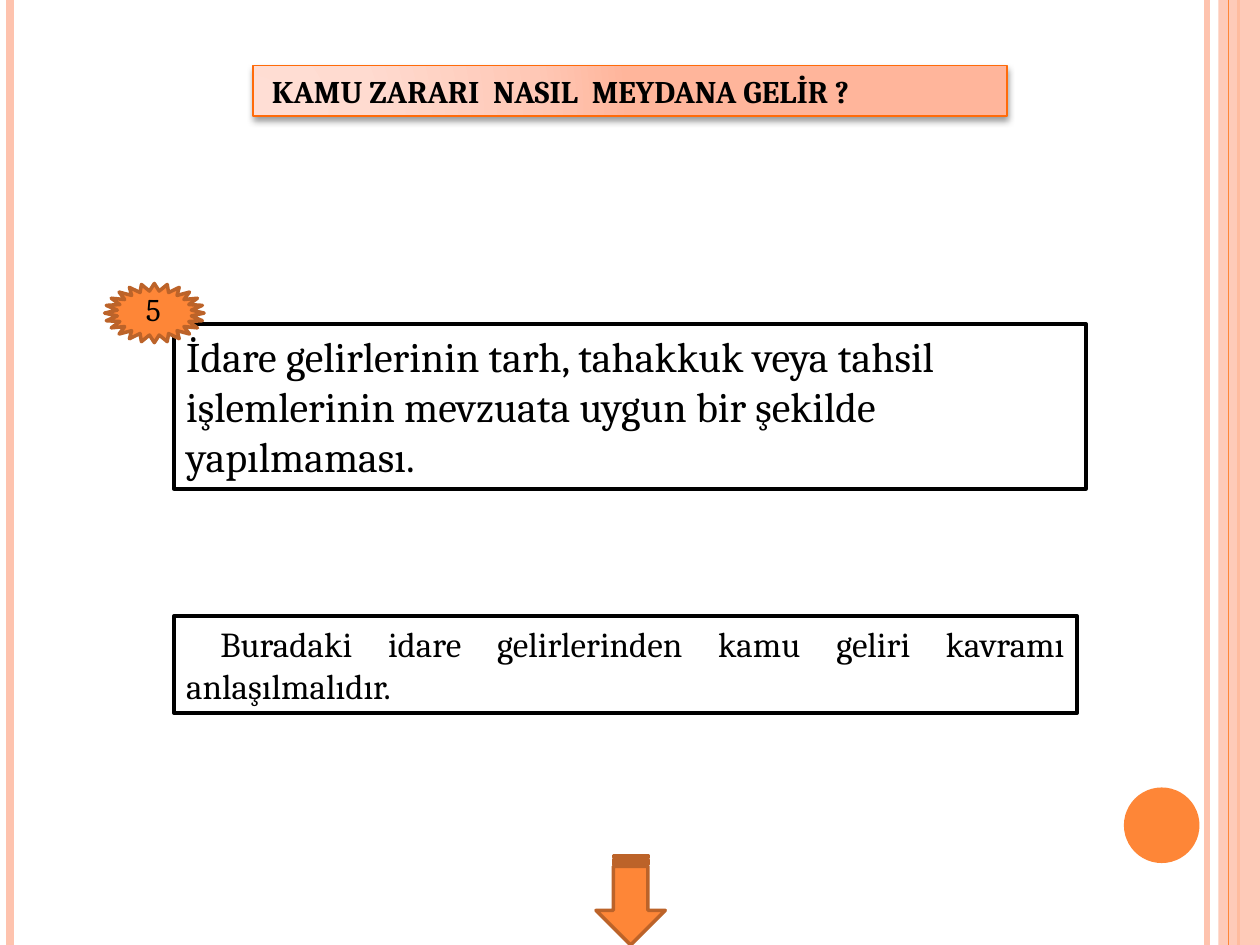
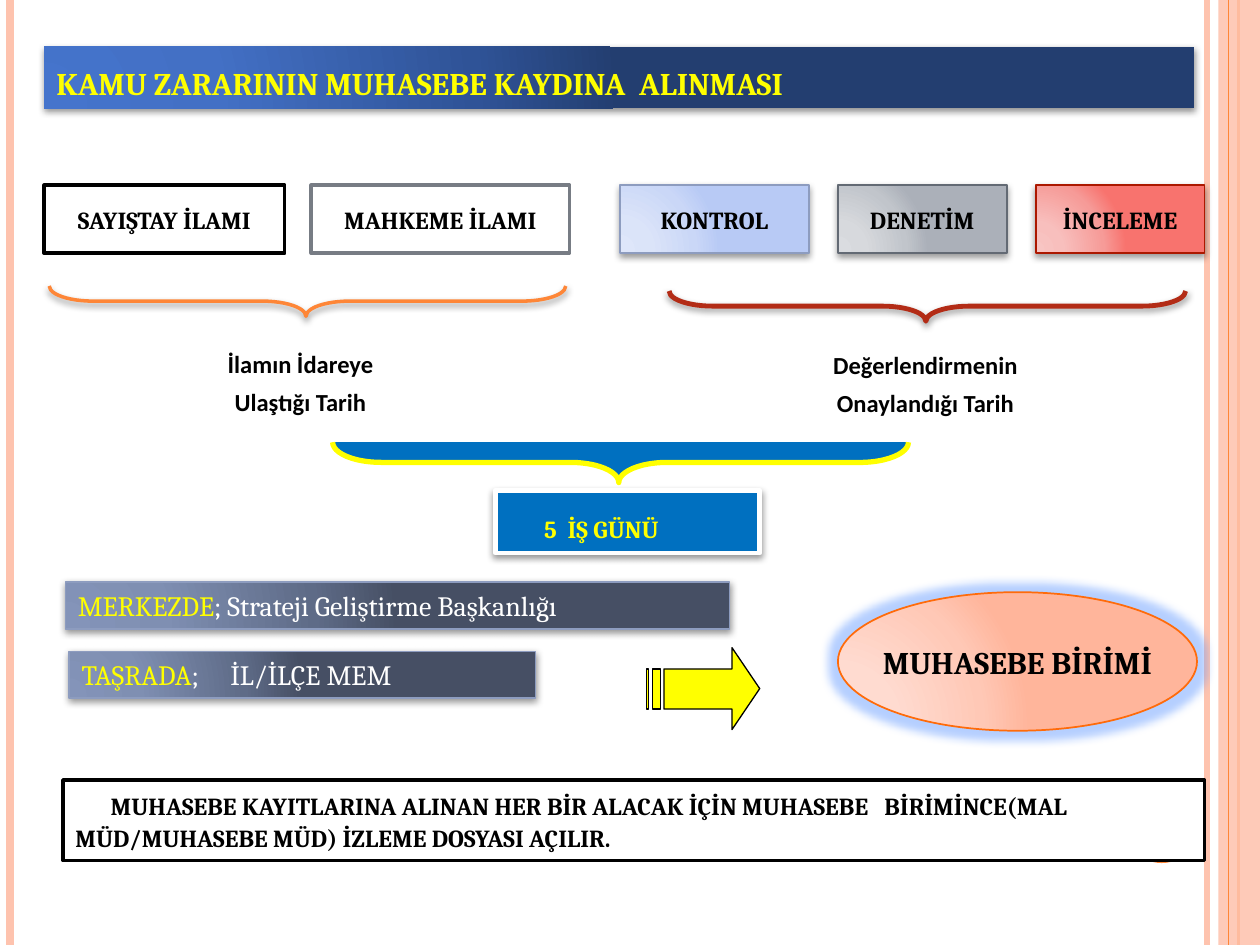
from lxml.etree import SubElement as Sub
from pptx import Presentation
from pptx.dml.color import RGBColor as RGB
from pptx.enum.shapes import MSO_CONNECTOR as Conn, MSO_SHAPE as Kind
from pptx.enum.text import MSO_ANCHOR as Anchor, PP_ALIGN as Align
from pptx.oxml.ns import qn
from pptx.util import Inches, Pt

BLACK = RGB(0, 0, 0)
WHITE = RGB(0xFF, 0xFF, 0xFF)
YELLOW = RGB(0xFF, 0xFF, 0x00)
ORANGE = RGB(0xFE, 0x86, 0x37)
PEACH = RGB(0xFE, 0xC3, 0xAE)
BROWN = RGB(0xBC, 0x63, 0x29)
FLAME = RGB(0xFF, 0x6B, 0x0A)
BLUE = RGB(0x00, 0x70, 0xC0)
STEEL = RGB(0x8D, 0x9C, 0xBF)
SLATE = RGB(0x63, 0x6A, 0x74)
GREY = RGB(0x77, 0x7C, 0x84)
RED = RGB(0xAC, 0x18, 0x00)
RUST = RGB(0xB3, 0x2C, 0x16)
HALO = RGB(0x5C, 0x95, 0xFF)


def ramp(*codes):
    """Pair four colours with the stops that all gradients share."""
    return [(stop, RGB.from_string(code)) for stop, code in zip((0, 30, 75, 100), codes)]


CORAL = ramp("FFDED5", "FFDBD0", "FFC8B6", "FFB59B")
NAVY = ramp("4574CC", "4370C5", "2F5397", "233E70")
SKY = ramp("DEE6FA", "DBE4F9", "CAD7F7", "B8CAF5")
SILVER = ramp("DADCE0", "D7D9DD", "C1C5CB", "ABB0B9")
ROSE = ramp("F8C5C3", "F8BFBD", "F69B98", "F8736E")
DUSK = ramp("8494B9", "7F8FB2", "5E6B87", "464F64")
SOFT = (40, 2)
FIRM = (42, 1.6)
BASE = dict(name="Cambria", size=18, bold=False, color=BLACK)
HEAD = dict(bold=True)
CARD = dict(size=14, bold=True)


def tint(node, color, alpha=100):
    """Add a colour with its opacity to an XML node."""
    clr = Sub(node, qn("a:srgbClr"), val=str(color))
    if alpha < 100:
        Sub(clr, qn("a:alpha"), val=str(alpha * 1000))


def blend(shape, stops):
    """Fill a shape with a radial gradient."""
    shape.fill.solid()
    old = shape._element.spPr.find(qn("a:solidFill"))
    grad = Sub(shape._element.spPr, qn("a:gradFill"), rotWithShape="1")
    items = Sub(grad, qn("a:gsLst"))
    for stop, color in stops:
        tint(Sub(items, qn("a:gs"), pos=str(stop * 1000)), color)
    way = Sub(grad, qn("a:path"), path="circle")
    Sub(way, qn("a:fillToRect"), l="5000", t="100000", r="120000", b="10000")
    old.getparent().replace(old, grad)


def effect(shape, shade=None, glow=None):
    """Replace the default shadow with a chosen shadow or glow."""
    shape.shadow.inherit = False
    node = shape._element.spPr.find(qn("a:effectLst"))
    if glow:
        tint(Sub(node, qn("a:glow"), rad=str(Inches(0.14))), glow, 45)
    if shade:
        alpha, dist = shade
        out = Sub(node, qn("a:outerShdw"), blurRad=str(Pt(4)), dist=str(Pt(dist)),
                  dir="5400000", rotWithShape="0")
        tint(out, BLACK, alpha)


def paint(shape, fill=None, line=None, width=1, shade=None, glow=None):
    """Set fill, line and effects of a shape."""
    if isinstance(fill, list):
        blend(shape, fill)
    elif fill is None:
        shape.fill.background()
    else:
        shape.fill.solid()
        shape.fill.fore_color.rgb = fill
    if line is None:
        shape.line.fill.background()
    else:
        shape.line.color.rgb = line
        shape.line.width = Pt(width)
    effect(shape, shade, glow)
    return shape


def put(slide, kind, box, turn=0, **look):
    """Add a painted shape that covers the box, also when turned by 90 degrees."""
    x, y, w, h = box
    if turn:
        x, y, w, h = x + (w - h) / 2, y + (h - w) / 2, h, w
    shape = slide.shapes.add_shape(kind, *map(Inches, (x, y, w, h)))
    shape.rotation = turn
    return paint(shape, **look)


def write(shape, lines, form=None, align=Align.LEFT, anchor=Anchor.TOP, wrap=True,
          space=None, indent=0, tab=0):
    """Write lines, each a list of (text, colour) runs or a string."""
    frame = shape.text_frame
    frame.word_wrap, frame.vertical_anchor = wrap, anchor
    look = {**BASE, **(form or {})}
    for i, line in enumerate(lines):
        para = frame.paragraphs[0] if i == 0 else frame.add_paragraph()
        para.alignment = align
        if space:
            para.line_spacing = space
        props = para._p.get_or_add_pPr()
        if indent:
            props.set("indent", str(Inches(indent)))
        if tab:
            Sub(Sub(props, qn("a:tabLst")), qn("a:tab"), pos=str(Inches(tab)), algn="l")
        for text, color in [(line, look["color"])] if isinstance(line, str) else line:
            run = para.add_run()
            run.text = text
            for key, val in dict(name=look["name"], size=Pt(look["size"]), bold=look["bold"]).items():
                setattr(run.font, key, val)
            run.font.color.rgb = color


def label(slide, box, lines, **kw):
    """Add a plain text box."""
    write(slide.shapes.add_textbox(*map(Inches, box)), lines, **kw)


def panel(slide, box, text, **kw):
    """Add a white note with a black frame."""
    write(put(slide, Kind.RECTANGLE, box, fill=WHITE, line=BLACK, width=2), [text], **kw)


def rule(slide, x, height, color, width):
    """Add a full-height stripe."""
    line = slide.shapes.add_connector(Conn.STRAIGHT, Inches(x), 0, Inches(x), Inches(height))
    line.line.color.rgb = color
    line.line.width = Pt(width)
    Sub(line._element.spPr, qn("a:effectLst"))


def border(slide, box):
    """Draw the side stripes and the disc that all slides share."""
    x, y, w, h = box
    for at, color, width in ((w - 0.42, PEACH, 3), (0.08, PEACH, 4.5), (w - 0.17, ORANGE, 1.5)):
        rule(slide, x + at, h, color, width)
    strip = put(slide, Kind.RECTANGLE, (x + w - 0.33, y, 0.33, h), fill=PEACH)
    clr = strip._element.spPr.find(qn("a:solidFill"))[0]
    Sub(clr, qn("a:alpha"), val="87000")
    rule(slide, x + w - 0.25, h, ORANGE, 0.75)
    put(slide, Kind.OVAL, (x + w - 1.08, y + h - 1.25, 0.6, 0.6), fill=ORANGE)


def title(slide, box, text, look, **kw):
    """Draw the title band."""
    write(put(slide, Kind.RECTANGLE, box, **look), [text], **kw)


def badge(slide, box, text):
    """Draw a numbered star."""
    x, y, w, h = box
    put(slide, Kind.STAR_24_POINT, box, fill=ORANGE, line=BROWN, width=2)
    label(slide, (x + 0.23, y, 0.24, 0.4), [text])


def brace(slide, box, bend=1.445, **look):
    """Draw a brace that points down."""
    shape = put(slide, Kind.RIGHT_BRACE, box, 90, **look)
    shape.adjustments[0], shape.adjustments[1] = bend, 0.503


def group(slide, box, gap, cards, arc, look, note, lines):
    """Draw a row of cards, the brace below it and its caption."""
    x, y, w, h = box
    at = x
    for text, width, style in cards:
        card = put(slide, Kind.RECTANGLE, (at, y, width, h), **style)
        write(card, [text], form=CARD, align=Align.CENTER, anchor=Anchor.MIDDLE, wrap=False)
        at += width + gap
    left, top = arc
    brace(slide, (x + left, y + top, 4.1, 0.24), **look)
    left, top = note
    label(slide, (x + left, y + top, w, 0.71), lines, form=dict(CARD, name="Calibri"),
          align=Align.CENTER, space=1.3)


def term(slide, box):
    """Draw the yellow brace and the deadline under it."""
    x, y, w, h = box
    brace(slide, (x, y, w, 0.32), 1.205, fill=BLUE, line=YELLOW, width=3)
    tag = put(slide, Kind.RECTANGLE, (x + 1.29, y + h - 0.5, 2.1, 0.5),
              fill=BLUE, line=WHITE, width=2.75, shade=SOFT)
    write(tag, ["5  İŞ GÜNÜ"], form=dict(CARD, color=YELLOW), anchor=Anchor.MIDDLE,
          space=1.5, indent=0.29)


def office(slide, box, place, text, **kw):
    """Draw a dark bar that names a place and its office."""
    bar = put(slide, Kind.RECTANGLE, box, fill=DUSK, line=STEEL, shade=FIRM)
    write(bar, [[(place, YELLOW), (text, WHITE)]], form=dict(size=16), **kw)


def arrow(slide, box):
    """Draw a striped arrow of one head and two bars."""
    x, y, w, h = map(Inches, box)
    low, high, neck, tail = h * 0.26, h * 0.75, w - Inches(0.22), Inches(0.14)
    head = [(neck, 0), (neck, low), (tail, low), (tail, high), (neck, high), (neck, h), (w, h / 2)]
    spans = [(Inches(a), Inches(b)) for a, b in ((0.05, 0.11), (0, 0.02))]
    bars = [[(a, low), (a, high), (b, high), (b, low)] for a, b in spans]
    pen = slide.shapes.build_freeform(*head[0], scale=1)
    pen.add_line_segments(head[1:])
    for bar in bars:
        pen.move_to(*bar[0])
        pen.add_line_segments(bar[1:])
    paint(pen.convert_to_shape(x, y), fill=YELLOW, line=BLACK, width=0.75)


def cause(slide):
    """Build the slide on how public loss arises."""
    panel(slide, (1.38, 2.57, 7.24, 1.31),
          "İdare gelirlerinin tarh, tahakkuk veya tahsil işlemlerinin mevzuata uygun "
          "bir şekilde yapılmaması.", form=dict(size=24))
    panel(slide, (1.38, 4.89, 7.17, 0.77),
          "Buradaki idare gelirlerinden kamu geliri kavramı anlaşılmalıdır.",
          form=dict(size=20), align=Align.JUSTIFY, indent=0.27)
    badge(slide, (0.83, 2.25, 0.79, 0.47), "5")
    put(slide, Kind.STRIPED_RIGHT_ARROW, (4.73, 6.79, 0.55, 0.71), 90,
        fill=ORANGE, line=BROWN, width=2)
    title(slide, (2.01, 0.52, 5.98, 0.4), "KAMU ZARARI  NASIL  MEYDANA GELİR ?",
          dict(fill=CORAL, line=FLAME, shade=SOFT), form=HEAD, indent=0.05)


def record(slide):
    """Build the slide on booking public loss."""
    title(slide, (0.35, 0.37, 9.13, 0.49), "KAMU ZARARININ MUHASEBE KAYDINA  ALINMASI",
          dict(fill=NAVY, shade=FIRM), form=dict(HEAD, color=YELLOW), space=1.3)
    group(slide, (0.35, 1.47, 4.17, 0.54), 0.21,
          [("SAYIŞTAY İLAMI", 1.91, dict(fill=WHITE, line=BLACK, width=2)),
           ("MAHKEME İLAMI", 2.05, dict(fill=WHITE, line=GREY, width=2))],
          (0.04, 0.8), dict(line=ORANGE, width=2, shade=SOFT),
          (-0.05, 1.18), ["İlamın İdareye", "Ulaştığı Tarih"])
    group(slide, (4.92, 1.47, 4.65, 0.54), 0.23,
          [("KONTROL", 1.5, dict(fill=SKY, line=STEEL, shade=SOFT)),
           ("DENETİM", 1.34, dict(fill=SILVER, line=SLATE, shade=SOFT)),
           ("İNCELEME", 1.34, dict(fill=ROSE, line=RED, shade=SOFT))],
          (0.39, 0.84), dict(line=RUST, width=2.75, shade=FIRM),
          (0.1, 1.19), ["Değerlendirmenin", "Onaylandığı Tarih"])
    term(slide, (2.64, 3.51, 4.57, 0.88))
    office(slide, (0.52, 4.62, 5.27, 0.37), "MERKEZDE", "; Strateji Geliştirme Başkanlığı")
    office(slide, (0.55, 5.17, 3.7, 0.37), "TAŞRADA", ";\tİL/İLÇE MEM", tab=1.18)
    arrow(slide, (5.13, 5.14, 0.9, 0.65))
    unit = put(slide, Kind.OVAL, (6.65, 4.7, 2.85, 1.1), fill=CORAL, line=FLAME, glow=HALO)
    write(unit, ["MUHASEBE BİRİMİ"], form=HEAD, align=Align.CENTER,
          anchor=Anchor.MIDDLE, wrap=False)
    panel(slide, (0.5, 6.19, 9.06, 0.64),
          "MUHASEBE KAYITLARINA ALINAN HER BİR ALACAK İÇİN MUHASEBE   BİRİMİNCE"
          "(MAL MÜD/MUHASEBE MÜD) İZLEME DOSYASI AÇILIR.",
          form=CARD, anchor=Anchor.MIDDLE, space=1.1, indent=0.28)


def main():
    """Build both slides and save them."""
    deck = Presentation()
    deck.slide_width, deck.slide_height = Inches(10), Inches(7.5)
    for build in (cause, record):
        slide = deck.slides.add_slide(deck.slide_layouts[6])
        border(slide, (0, 0, 10, 7.5))
        build(slide)
    deck.save("out.pptx")


if __name__ == "__main__":
    main()
